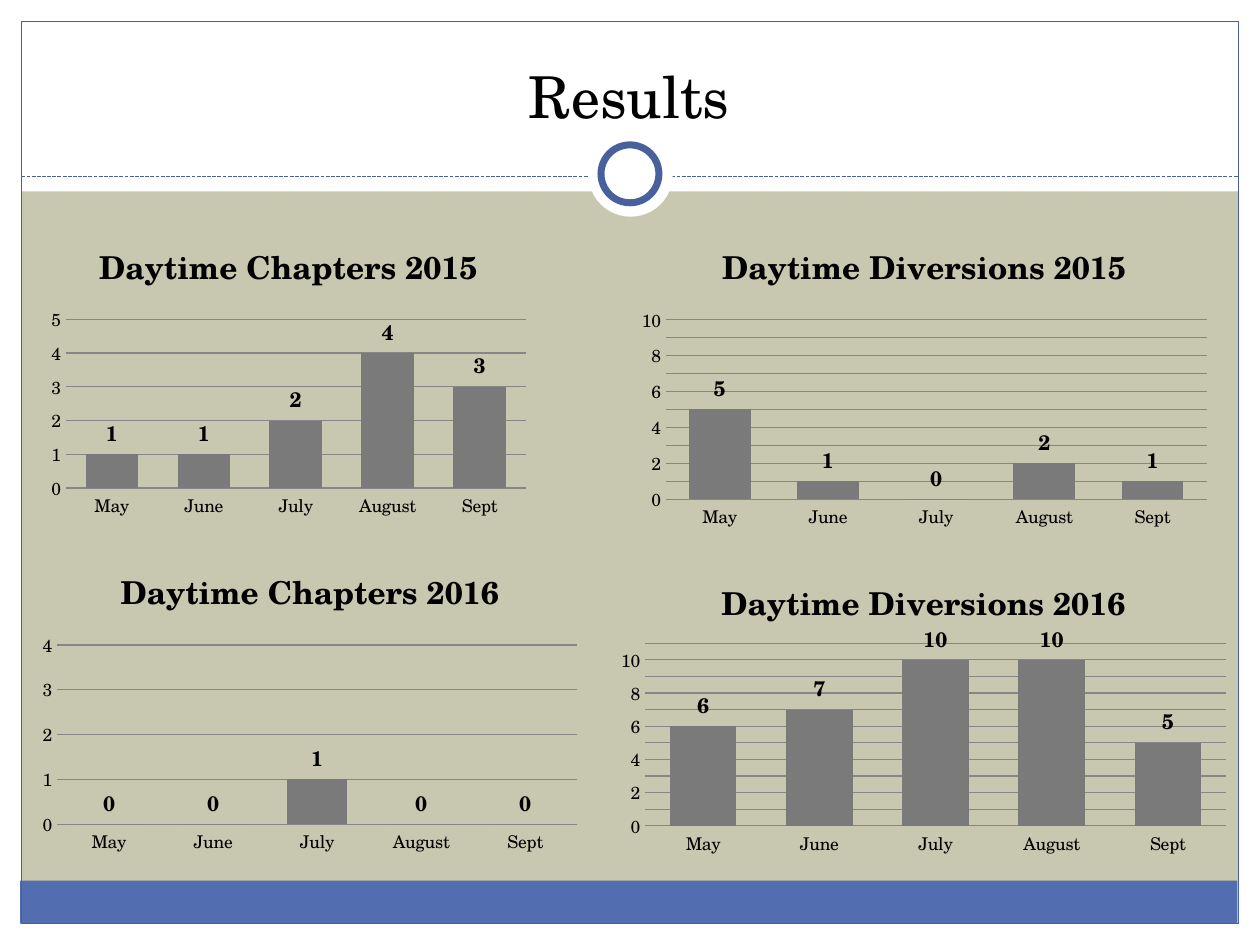
from dataclasses import dataclass

from lxml import etree
from pptx import Presentation
from pptx.chart.data import CategoryChartData
from pptx.dml.color import RGBColor
from pptx.enum.chart import XL_CHART_TYPE as ChartType
from pptx.enum.chart import XL_LABEL_POSITION as LabelPosition
from pptx.enum.chart import XL_TICK_MARK as TickMark
from pptx.enum.dml import MSO_LINE as Dash
from pptx.enum.shapes import MSO_CONNECTOR as Connector
from pptx.enum.shapes import MSO_SHAPE as Shape
from pptx.enum.text import MSO_ANCHOR as Anchor
from pptx.enum.text import PP_ALIGN as Align
from pptx.oxml.ns import qn
from pptx.util import Inches, Pt


@dataclass(frozen=True)
class Theme:
    font: str = "TeX Gyre Schola"
    backdrop: str = "C8C8B1"
    white: str = "FFFFFF"
    band: str = "526DB0"
    border: str = "48609B"
    text: str = "000000"
    bar: str = "7A7A7A"
    grid: str = "868686"
    title_size: float = 33
    chart_title_size: float = 18
    label_size: float = 12
    axis_size: float = 10


THEME = Theme()
MONTHS = ["May", "June", "July", "August", "Sept"]

# Chart title, box (left, top, width, height), values, axis maximum
CHARTS = [
    ("Daytime Chapters 2015", (0.33, 1.75, 3.92, 2.41), (1, 1, 2, 4, 3), None),
    ("Daytime Diversions 2015", (5, 1.75, 4.67, 2.5), (5, 1, 0, 2, 1), 10),
    ("Daytime Chapters 2016", (0.25, 4.33, 4.42, 2.5), (0, 0, 1, 0, 0), 4),
    ("Daytime Diversions 2016", (4.83, 4.42, 5, 2.42), (6, 7, 10, 10, 5), None),
]


def rgb(color):
    return RGBColor.from_string(color)


def style_font(font, size, bold=False):
    font.name = THEME.font
    font.size = Pt(size)
    font.bold = bold
    font.color.rgb = rgb(THEME.text)


def write_text(frame, text, size, bold=False, align=Align.CENTER):
    paragraph = frame.paragraphs[0]
    paragraph.alignment = align
    run = paragraph.add_run()
    run.text = text
    style_font(run.font, size, bold)


class SlideBuilder:
    def __init__(self, slide, theme):
        self.slide = slide
        self.shapes = slide.shapes
        self.theme = theme

    def background(self, color):
        fill = self.slide.background.fill
        fill.solid()
        fill.fore_color.rgb = rgb(color)

    def shape(self, kind, box, fill=None, line=None, width=0.75):
        shape = self.shapes.add_shape(kind, *map(Inches, box))
        shape.shadow.inherit = False
        if fill:
            shape.fill.solid()
            shape.fill.fore_color.rgb = rgb(fill)
        else:
            shape.fill.background()
        if line:
            shape.line.color.rgb = rgb(line)
            shape.line.width = Pt(width)
        else:
            shape.line.fill.background()

    def dashed_rule(self, left, right, y):
        rule = self.shapes.add_connector(
            Connector.STRAIGHT, Inches(left), Inches(y), Inches(right), Inches(y))
        rule.line.color.rgb = rgb(self.theme.border)
        rule.line.width = Pt(0.75)
        rule.line.dash_style = Dash.SQUARE_DOT
        etree.SubElement(rule._element.spPr, qn("a:effectLst"))

    def title(self, text, box):
        title = self.shapes.title
        title.left, title.top, title.width, title.height = map(Inches, box)
        title.text_frame.vertical_anchor = Anchor.BOTTOM
        write_text(title.text_frame, text, self.theme.title_size)
        # Bring the title in front of the white header
        title._element.getparent().append(title._element)

    def column_chart(self, heading, box, values, maximum):
        data = CategoryChartData()
        data.categories = MONTHS
        data.add_series(heading, values)
        chart = self.shapes.add_chart(
            ChartType.COLUMN_CLUSTERED, *map(Inches, box), data).chart
        style_font(chart.font, self.theme.axis_size)
        chart.has_legend = False
        chart.has_title = True
        write_text(chart.chart_title.text_frame, heading,
                   self.theme.chart_title_size, bold=True)
        chart.chart_title.include_in_layout = False

        # Axes and gridlines
        months, counts = chart.category_axis, chart.value_axis
        for axis in (months, counts):
            axis.major_tick_mark = axis.minor_tick_mark = TickMark.NONE
        months.format.line.color.rgb = rgb(self.theme.grid)
        counts.format.line.fill.background()
        counts.major_unit = 1
        if maximum is not None:
            counts.maximum_scale = maximum
        counts.has_major_gridlines = True
        counts.major_gridlines.format.line.color.rgb = rgb(self.theme.grid)

        # Columns and their values
        plot = chart.plots[0]
        plot.gap_width = 75
        plot.vary_by_categories = False
        columns = plot.series[0]
        columns.format.fill.solid()
        columns.format.fill.fore_color.rgb = rgb(self.theme.bar)
        labels = columns.data_labels
        labels.show_value = True
        labels.position = LabelPosition.OUTSIDE_END
        style_font(labels.font, self.theme.label_size, bold=True)


def main():
    deck = Presentation()
    deck.slide_width, deck.slide_height = Inches(10), Inches(7.5)
    results = SlideBuilder(deck.slides.add_slide(deck.slide_layouts[5]), THEME)
    results.background(THEME.backdrop)

    # White margins and header
    for margin in [(0, 7.33, 10, 0.17), (0, 0, 10, 1.52),
                   (0, 0, 0.17, 7.5), (9.83, 0, 0.17, 7.5)]:
        results.shape(Shape.RECTANGLE, margin, fill=THEME.white)

    # Footer band, frame and divider
    results.shape(Shape.RECTANGLE, (0.16, 6.99, 9.66, 0.34), fill=THEME.band)
    results.shape(Shape.RECTANGLE, (0.17, 0.17, 9.66, 7.16), line=THEME.border)
    results.dashed_rule(0.17, 9.83, 1.4)

    # Ring on the divider
    results.shape(Shape.OVAL, (4.67, 1.05, 0.67, 0.67), fill=THEME.white)
    results.shape(Shape.OVAL, (4.77, 1.15, 0.46, 0.46),
                  fill=THEME.white, line=THEME.border, width=4)

    results.title("Results", (0.33, 0.25, 9.33, 0.83))
    for chart in CHARTS:
        results.column_chart(*chart)

    deck.save("out.pptx")


if __name__ == "__main__":
    main()
